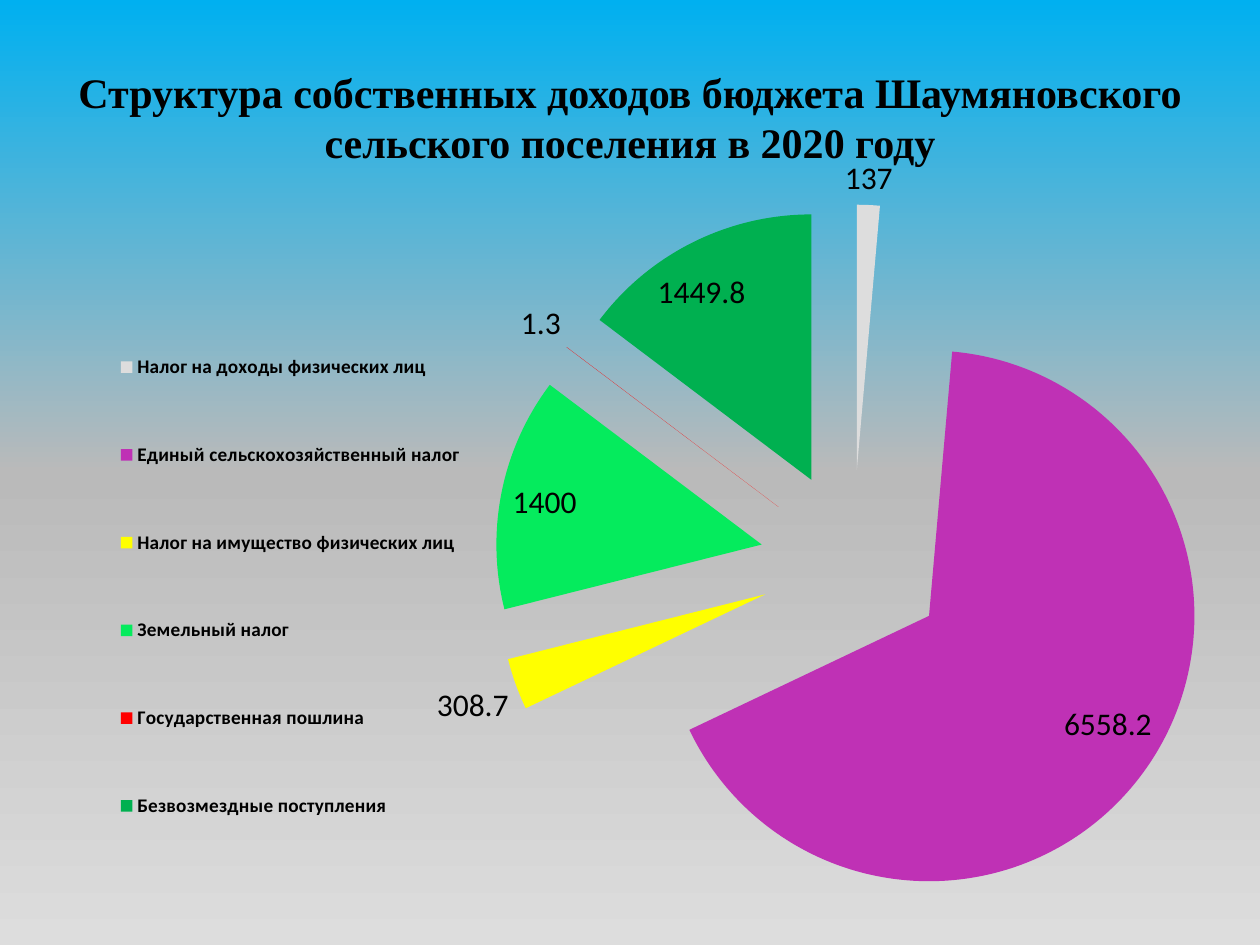
from copy import deepcopy

from lxml import etree
from pptx import Presentation, util as u
from pptx.chart.data import CategoryChartData
from pptx.dml.color import RGBColor
from pptx.enum import chart as charts, text
from pptx.oxml.ns import qn

INCOME = [
    ("Налог на доходы физических лиц", 137, "DDDDDD"),
    ("Единый сельскохозяйственный налог", 6558.2, "BF31B5"),
    ("Налог на имущество физических лиц", 308.7, "FFFF00"),
    ("Земельный налог", 1400, "05EB5D"),
    ("Государственная пошлина", 1.3, "FF0000"),
    ("Безвозмездные поступления", 1449.8, "00B050"),
]


def color(value):
    return RGBColor.from_string(value)


def sub(parent, tag, value=None):
    child = etree.SubElement(parent, qn(tag))
    if value is not None:
        child.set("val", str(value))
    return child


def place(element, left, top, width, height, inner=False):
    """Give a chart part a manual layout in fractions of the chart."""
    for old in element.findall(qn("c:layout")):
        element.remove(old)
    layout = etree.Element(qn("c:layout"))
    manual = sub(layout, "c:manualLayout")
    if inner:
        sub(manual, "c:layoutTarget", "inner")
    sub(manual, "c:xMode", "edge")
    sub(manual, "c:yMode", "edge")
    for key, value in zip("xywh", (left, top, width, height)):
        sub(manual, f"c:{key}", value)
    position = element.find(qn("c:legendPos"))
    if position is None:
        element.insert(0, layout)
    else:
        position.addnext(layout)


class SlideBuilder:
    ink = "000000"
    title_font = "Times New Roman"
    chart_font = "Calibri"

    def __init__(self, presentation):
        self.slide = presentation.slides.add_slide(presentation.slide_layouts[5])

    def style(self, font, name, size, bold=False):
        font.name, font.size, font.bold = name, u.Pt(size), bold
        font.color.rgb = color(self.ink)

    def background(self, *hexes):
        """Fill the slide from top to bottom with evenly spaced colours."""
        fill = self.slide.background.fill
        fill.gradient()
        fill.gradient_angle = 270
        stops = self.slide.element.find(".//" + qn("a:gsLst"))
        while len(stops) < len(hexes):
            stops.append(deepcopy(stops[-1]))
        for index, (stop, value) in enumerate(zip(fill.gradient_stops, hexes)):
            stop.position = index / (len(hexes) - 1)
            stop.color.rgb = color(value)

    def title(self, words, left, top, width, height):
        shape = self.slide.shapes.title
        shape.left, shape.top = u.Pt(left), u.Pt(top)
        shape.width, shape.height = u.Pt(width), u.Pt(height)
        frame = shape.text_frame
        frame.text = words
        frame.word_wrap = True
        frame.vertical_anchor = text.MSO_ANCHOR.MIDDLE
        paragraph = frame.paragraphs[0]
        paragraph.alignment = text.PP_ALIGN.CENTER
        self.style(paragraph.runs[0].font, self.title_font, 24, True)

    def pie(self, rows, left, top, width, height, explosion):
        names, values, fills = zip(*rows)
        data = CategoryChartData()
        data.categories = names
        data.add_series("Доходы", values)
        chart = self.slide.shapes.add_chart(
            charts.XL_CHART_TYPE.PIE, u.Pt(left), u.Pt(top),
            u.Pt(width), u.Pt(height), data).chart
        chart.has_title = False
        self.style(chart.font, self.chart_font, 18)

        plot = chart.plots[0]
        plot.vary_by_categories = True
        series = plot.series[0]
        exploded = etree.Element(qn("c:explosion"), val=str(explosion))
        series._element.find(qn("c:tx")).addnext(exploded)
        for index, value in enumerate(fills):
            fill = series.points[index].format.fill
            fill.solid()
            fill.fore_color.rgb = color(value)

        labels = series.data_labels
        labels.show_value = True
        labels.position = charts.XL_LABEL_POSITION.BEST_FIT
        self.style(labels.font, self.chart_font, 18)

        chart.has_legend = True
        legend = chart.legend
        legend.position = charts.XL_LEGEND_POSITION.RIGHT
        legend.include_in_layout = False
        self.style(legend.font, self.chart_font, 11, True)
        place(legend._element, 0.09, 0.17, 0.29, 0.75)
        plot_area = chart.element.find(".//" + qn("c:plotArea"))
        place(plot_area, 0.39, 0.06, 0.6, 0.91, inner=True)


def main():
    presentation = Presentation()
    presentation.slide_width, presentation.slide_height = u.Pt(720), u.Pt(540)
    builder = SlideBuilder(presentation)
    builder.background("00B0F0", "BABABA", "DDDDDD")
    builder.title("Структура собственных доходов бюджета Шаумяновского "
                  "сельского поселения в 2020 году", 36, 21.6, 648, 90)
    builder.pie(INCOME, 0, 90, 706.3, 450, explosion=35)
    presentation.save("out.pptx")


if __name__ == "__main__":
    main()
